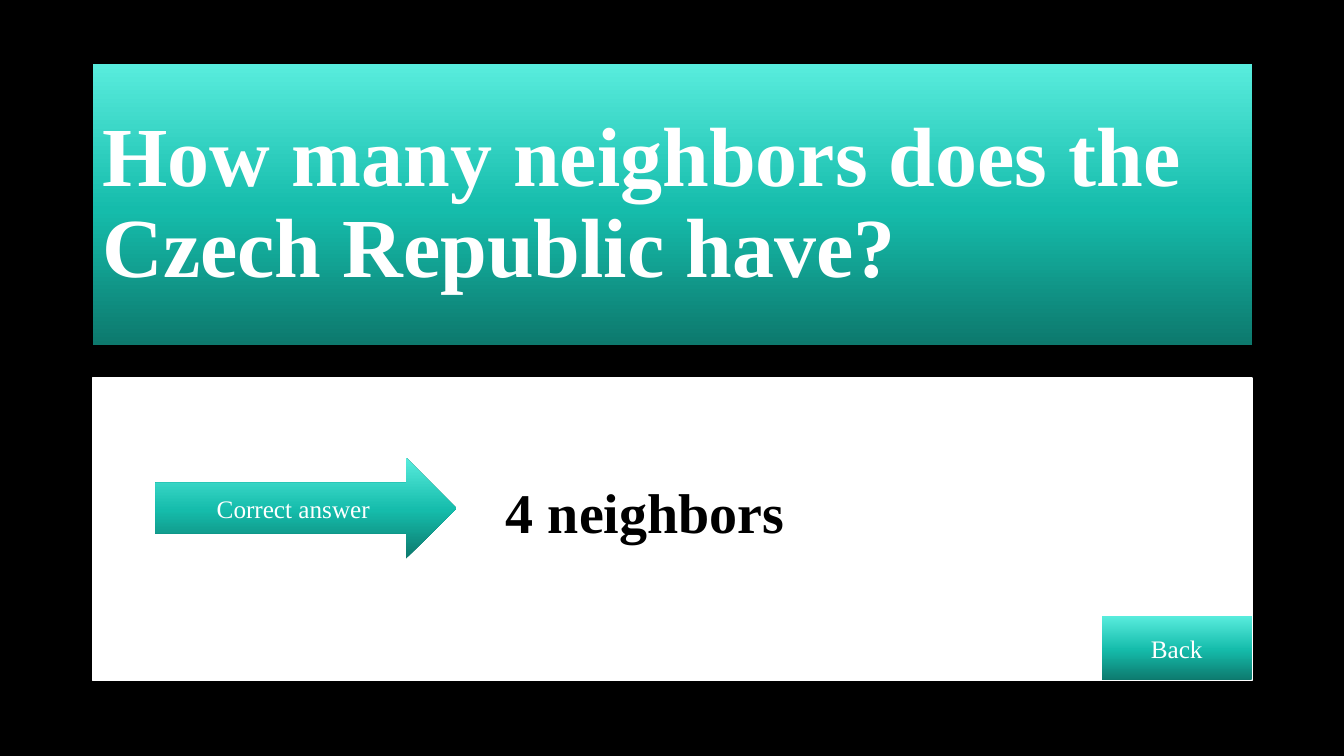
from copy import deepcopy

from pptx import Presentation
from pptx.dml.color import RGBColor
from pptx.enum.shapes import MSO_SHAPE
from pptx.enum.text import MSO_ANCHOR, PP_ALIGN
from pptx.oxml.ns import qn
from pptx.util import Pt

BLACK = RGBColor(0x00, 0x00, 0x00)
WHITE = RGBColor(0xFF, 0xFF, 0xFF)
DARK_TEAL = RGBColor(0x0D, 0x79, 0x6D)
TEAL = RGBColor(0x15, 0xBC, 0xAB)
LIGHT_TEAL = RGBColor(0x58, 0xEC, 0xDD)
TEAL_STOPS = [(0, DARK_TEAL), (0.48, TEAL), (1, LIGHT_TEAL)]
FONT = "Times New Roman"
PANEL_LEFT = 66.24
PANEL_WIDTH = 828


def add_box(page, kind, left, top, width, height):
    box = page.shapes.add_shape(kind, Pt(left), Pt(top), Pt(width), Pt(height))
    box.shadow.inherit = False
    box.line.fill.background()
    return box


def fill_teal(box):
    box.fill.gradient()
    box.fill.gradient_angle = 90
    stop_list = box._element.spPr.find(qn("a:gradFill")).find(qn("a:gsLst"))
    stop_list.append(deepcopy(stop_list[0]))
    for stop, (position, color) in zip(box.fill.gradient_stops, TEAL_STOPS):
        stop.position = position
        stop.color.rgb = color


def write(box, text, size, color, align, bold=False):
    frame = box.text_frame
    frame.word_wrap = True
    frame.vertical_anchor = MSO_ANCHOR.MIDDLE
    para = frame.paragraphs[0]
    para.alignment = align
    span = para.add_run()
    span.text = text
    span.font.name = FONT
    span.font.size = Pt(size)
    span.font.bold = bold
    span.font.color.rgb = color
    return frame


def add_question(page, text):
    box = add_box(page, MSO_SHAPE.RECTANGLE, PANEL_LEFT, 46, PANEL_WIDTH, 200.2)
    fill_teal(box)
    frame = write(box, text, 60, WHITE, PP_ALIGN.LEFT, bold=True)
    frame.paragraphs[0].line_spacing = 0.9


def add_answer(page, text):
    box = add_box(page, MSO_SHAPE.RECTANGLE, PANEL_LEFT, 270, PANEL_WIDTH, 216)
    box.fill.solid()
    box.fill.fore_color.rgb = WHITE
    box.line.color.rgb = WHITE
    box.line.width = Pt(1)
    frame = write(box, text, 40, BLACK, PP_ALIGN.LEFT, bold=True)
    frame.vertical_anchor = MSO_ANCHOR.TOP
    frame.margin_left = Pt(295.2)
    frame.margin_top = Pt(70.8)


def add_label(page, kind, text, left, top, width, height):
    box = add_box(page, kind, left, top, width, height)
    fill_teal(box)
    write(box, text, 18, WHITE, PP_ALIGN.CENTER)


def main():
    deck = Presentation()
    deck.slide_width = Pt(960)
    deck.slide_height = Pt(540)
    page = deck.slides.add_slide(deck.slide_layouts[6])
    page.background.fill.solid()
    page.background.fill.fore_color.rgb = BLACK
    add_question(page, "How many neighbors does the Czech Republic have?")
    add_answer(page, "4 neighbors")
    add_label(page, MSO_SHAPE.RECTANGLE, "Back", 787, 440, 107, 46)
    add_label(page, MSO_SHAPE.RIGHT_ARROW, "Correct answer", 111, 327, 215, 72)
    deck.save("out.pptx")


if __name__ == "__main__":
    main()
